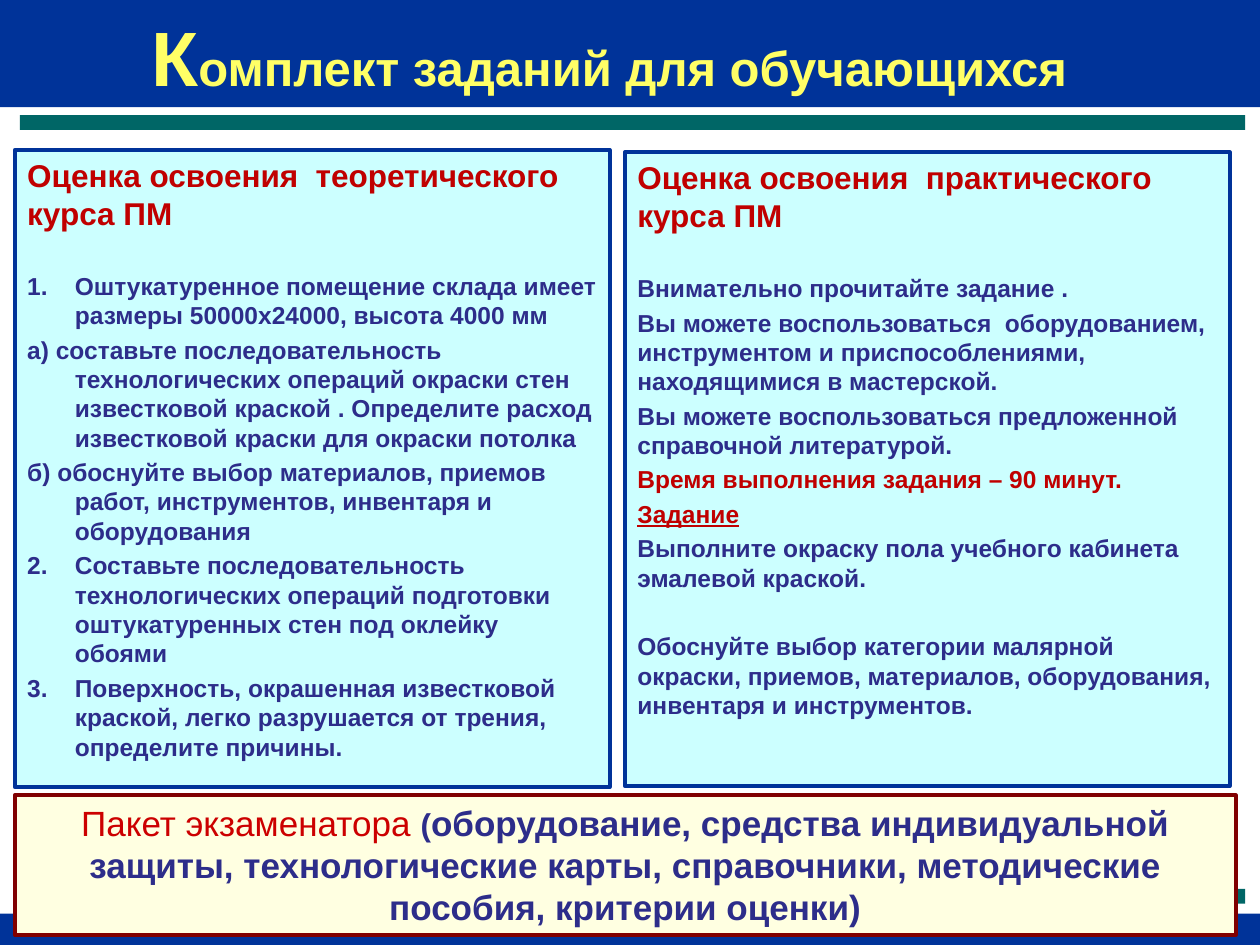
from lxml.etree import SubElement
from pptx import Presentation
from pptx.dml.color import RGBColor
from pptx.enum.shapes import MSO_SHAPE as Preset
from pptx.enum.text import MSO_ANCHOR as Anchor, PP_ALIGN as Align
from pptx.oxml.ns import qn
from pptx.util import Cm, Pt

NAVY, TEAL, AQUA, CREAM = "003399", "006666", "CCFFFF", "FFFFE1"
MAROON, RED, BRIGHT_RED, INDIGO, YELLOW = "800000", "C00000", "CC0000", "2D2D8A", "FFFF66"
PAGE_WIDTH, PAGE_HEIGHT = 25.4, 19.05
HANG = 0.96
BODY_SIZE = 14
BLANK_LINE = 19.6  # one body line with its own spacing, in points


def color(value):
    return RGBColor.from_string(value)


def add_span(para, text, size=BODY_SIZE, fill=INDIGO, bold=True, underline=False):
    span = para.add_run()
    span.text = text
    font = span.font
    font.name, font.size, font.bold = "Arial", Pt(size), bold
    font.underline = underline
    font.color.rgb = color(fill)
    return span


def add_box(page, box, fill, line=None):
    shape = page.shapes.add_shape(Preset.RECTANGLE, *map(Cm, box))
    shape.shadow.inherit = False
    shape.fill.solid()
    shape.fill.fore_color.rgb = color(fill)
    if line:
        shape.line.color.rgb = color(line)
        shape.line.width = Pt(2.25)
    else:
        shape.line.fill.background()
    frame = shape.text_frame
    frame.word_wrap = True
    frame.vertical_anchor = Anchor.TOP
    return shape


def set_hanging(para, number=None):
    properties = para._p.get_or_add_pPr()
    properties.set("marL", str(Cm(HANG)))
    properties.set("indent", str(-Cm(HANG)))
    if number:
        SubElement(properties, qn("a:buFont"), typeface="+mj-lt")
        SubElement(properties, qn("a:buAutoNum"), type="arabicPeriod", startAt=str(number))


def add_frame(page):
    # Bands at the edges, each with a thin rule beside it
    add_box(page, (0, 0, PAGE_WIDTH, 2.16), NAVY)
    add_box(page, (0, 18.42, PAGE_WIDTH, PAGE_HEIGHT - 18.42), NAVY)
    for top in (2.32, 17.92):
        add_box(page, (0.4, top, 24.7, 0.3), TEAL)


def add_title(page, box):
    title = page.shapes.title
    title.left, title.top, title.width, title.height = map(Cm, box)
    frame = title.text_frame
    frame.word_wrap = False
    frame.vertical_anchor = Anchor.TOP
    para = frame.paragraphs[0]
    para.alignment = Align.CENTER
    para.line_spacing = 0.9
    add_span(para, "К", size=44, fill=YELLOW)
    add_span(para, "омплект заданий для обучающихся", size=28, fill=YELLOW)
    # The title lies over the top band
    page.shapes._spTree.append(title._element)


def add_panel(page, box, heading, items):
    """Items are (text, options); gap, hang and number shape the paragraph."""
    frame = add_box(page, box, AQUA, NAVY).text_frame
    para = frame.paragraphs[0]
    para.alignment = Align.LEFT
    add_span(para, heading, size=18, fill=RED)
    for text, options in items:
        style = dict(options)
        gap, hang, number = (style.pop(key, None) for key in ("gap", "hang", "number"))
        para = frame.add_paragraph()
        para.alignment = Align.LEFT
        para.space_before = Pt(0.2 * BODY_SIZE + (BLANK_LINE if gap else 0))
        if hang:
            set_hanging(para, number)
        add_span(para, text, **style)


def add_footer(page, box):
    para = add_box(page, box, CREAM, MAROON).text_frame.paragraphs[0]
    para.alignment = Align.CENTER
    add_span(para, "Пакет экзаменатора ", size=20, fill=BRIGHT_RED, bold=False)
    add_span(para, "(", size=18)
    add_span(para, "оборудование, средства индивидуальной защиты, технологические карты, "
                   "справочники, методические пособия, критерии оценки)", size=20)


THEORY = [
    ("Оштукатуренное помещение склада имеет размеры 50000х24000, высота 4000 мм",
     dict(gap=True, hang=True, number=1)),
    ("а) составьте последовательность технологических операций окраски стен известковой "
     "краской . Определите расход известковой краски для окраски потолка", dict(hang=True)),
    ("б) обоснуйте выбор материалов, приемов работ, инструментов, инвентаря и оборудования",
     dict(hang=True)),
    ("Составьте последовательность технологических операций подготовки оштукатуренных "
     "стен под оклейку обоями", dict(hang=True, number=2)),
    ("Поверхность, окрашенная известковой краской, легко разрушается от трения, "
     "определите причины.", dict(hang=True, number=2)),  # continues the list from 2
]
PRACTICE = [
    ("Внимательно прочитайте задание .", dict(gap=True)),
    ("Вы можете воспользоваться  оборудованием, инструментом и приспособлениями, "
     "находящимися в мастерской.", {}),
    ("Вы можете воспользоваться предложенной справочной литературой.", {}),
    ("Время выполнения задания – 90 минут.", dict(fill=RED)),
    ("Задание", dict(fill=RED, underline=True)),
    ("Выполните окраску пола учебного кабинета эмалевой краской.", {}),
    ("Обоснуйте выбор категории малярной окраски, приемов, материалов, оборудования, "
     "инвентаря и инструментов.", dict(gap=True)),
]


def main():
    deck = Presentation()
    deck.slide_width, deck.slide_height = Cm(PAGE_WIDTH), Cm(PAGE_HEIGHT)
    page = deck.slides.add_slide(deck.slide_layouts.get_by_name("Title Only"))
    add_frame(page)
    add_panel(page, (12.6, 3.07, 12.19, 12.78),
              "Оценка освоения  практического курса ПМ", PRACTICE)
    add_title(page, (2.69, 0.28, 19.18, 1.96))
    add_panel(page, (0.3, 3.02, 11.99, 12.85),
              "Оценка освоения  теоретического курса ПМ", THEORY)
    add_footer(page, (0.3, 16.03, 24.61, 2.82))
    deck.save("out.pptx")


if __name__ == "__main__":
    main()
